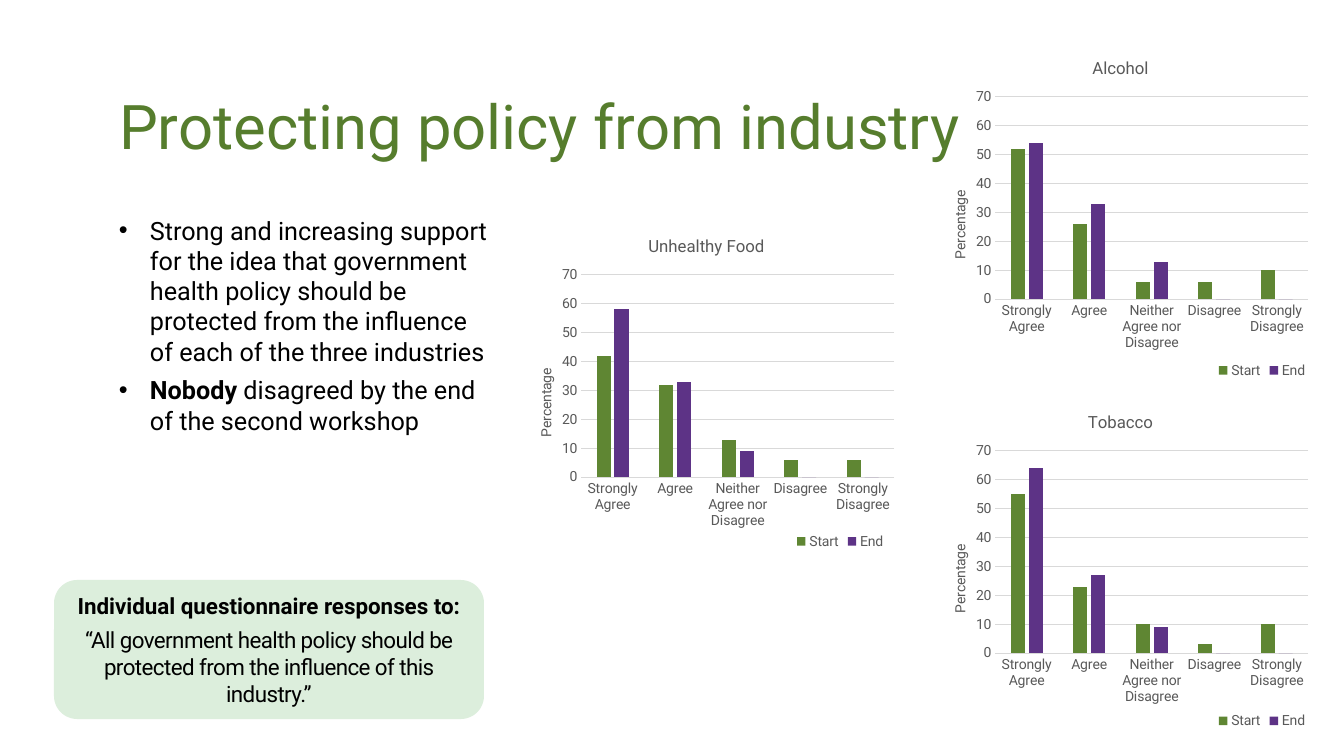
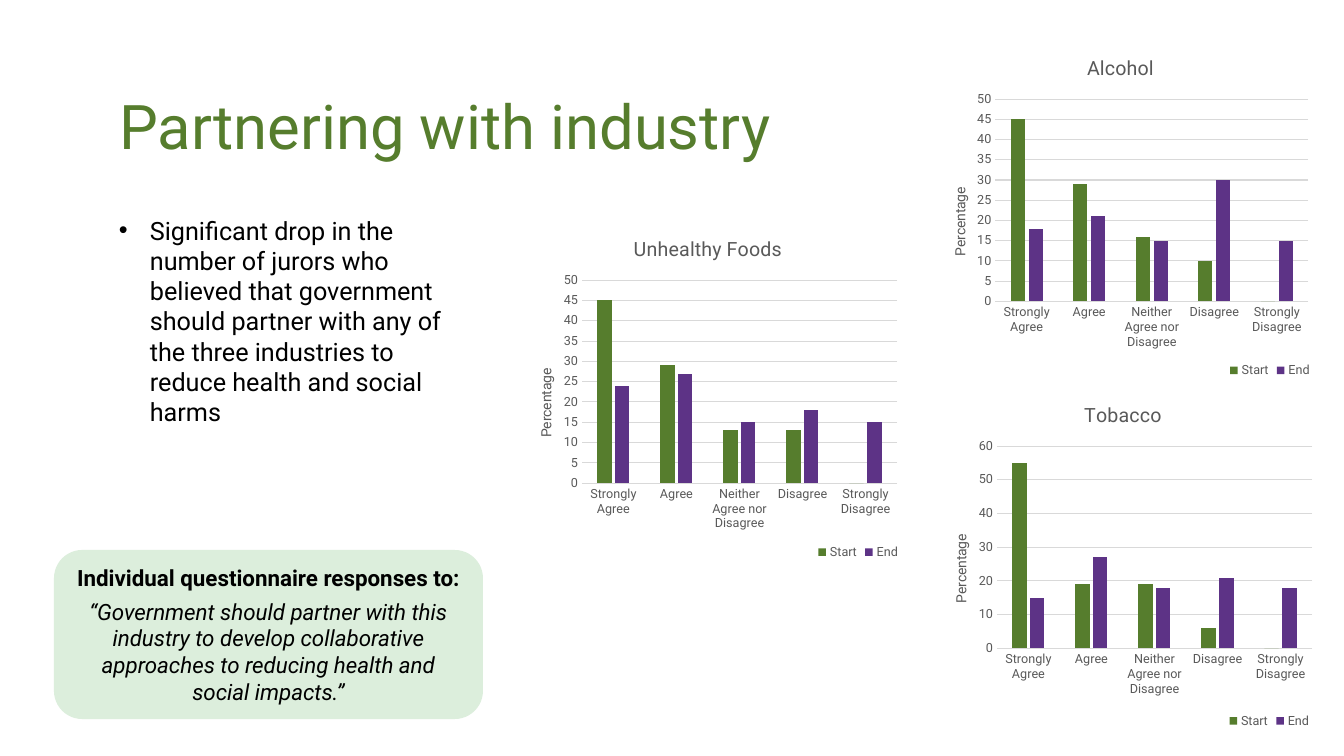
import pptx
import pptx.chart.data
import pptx.dml.color
import pptx.enum.chart
import pptx.enum.shapes
import pptx.enum.text
import pptx.oxml
import pptx.oxml.ns
import pptx.util

PX = 914400 / 100.8
FONT = "Roboto"
COLORS = {
    "title": "567D2D",
    "text": "000000",
    "card": "DCEEDC",
    "label": "595959",
    "grid": "D9D9D9",
    "end": "5D3386",
}
CATEGORIES = ["Strongly Agree", "Agree", "Neither Agree nor Disagree",
              "Disagree", "Strongly Disagree"]
SERIES_NAMES = ["Start", "End"]
PROMPT = "Individual questionnaire responses to:"
TITLE_BOX = (109, 57, 1159, 146)

qn = pptx.oxml.ns.qn
Pt = pptx.util.Pt
ALIGN = pptx.enum.text.PP_ALIGN
ANCHOR = pptx.enum.text.MSO_ANCHOR

# Each chart: title, box, axis maximum, legend corner (share of box), start, end
SLIDES = [
    {
        "title": "Protecting policy from industry",
        "bullets": [
            [("Strong and increasing support for the idea that government health "
              "policy should be protected from the influence of each of the three "
              "industries", False)],
            [("Nobody", True), (" disagreed by the end of the second workshop", False)],
        ],
        "bullet_box": (109, 210, 391, 271),
        "quote": "“All government health policy should be protected from the "
                 "influence of this industry.”",
        "quote_format": {"italic": False},
        "quote_spacing": -40,
        "quote_box": (54, 580, 430, 139),
        "look": {"start": "5F8633", "title_size": 12, "label_size": 10,
                 "plot_top": 0.16, "unit": 10},
        "charts": [
            ("Alcohol", (925, 41, 391, 349), 70, (0.74, 0.91),
             [52, 26, 6, 6, 10], [54, 33, 13, 0, 0]),
            ("Tobacco", (925, 395, 391, 349), 70, (0.74, 0.9),
             [55, 23, 10, 3, 10], [64, 27, 9, 0, 0]),
            ("Unhealthy Food", (511, 219, 391, 349), 70, (0.72, 0.89),
             [42, 32, 13, 6, 6], [58, 33, 9, 0, 0]),
        ],
    },
    {
        "title": "Partnering with industry",
        "bullets": [
            [("Significant drop in the number of jurors who believed that government "
              "should partner with any of the three industries to reduce health and "
              "social harms", False)],
        ],
        "bullet_box": (109, 210, 354, 263),
        "quote": "“Government should partner with this industry to develop "
                 "collaborative approaches to reducing health and social impacts.”",
        "quote_format": {"italic": True},
        "quote_spacing": 0,
        "quote_box": (54, 550, 429, 169),
        "look": {"start": "567D2D", "title_size": 14, "label_size": 9,
                 "plot_top": 0.175, "unit": 5},
        "charts": [
            ("Alcohol", (925, 38, 391, 349), 50, (0.77, 0.92),
             [45, 29, 16, 10, 0], [18, 21, 15, 30, 15]),
            ("Tobacco", (926, 385, 394, 349), 60, (0.76, 0.93),
             [55, 19, 19, 6, 0], [15, 27, 18, 21, 18]),
            ("Unhealthy Foods", (511, 219, 394, 350), 50, (0.77, 0.92),
             [45, 29, 13, 13, 0], [24, 27, 15, 18, 15]),
        ],
    },
]


def px(*values):
    return [pptx.util.Emu(round(v * PX)) for v in values]


def rgb(value):
    return pptx.dml.color.RGBColor.from_string(value)


def apply(obj, **values):
    for name, value in values.items():
        setattr(obj, name, value)


def set_font(font, size, color, **values):
    apply(font, name=FONT, size=Pt(size), **values)
    font.color.rgb = rgb(color)


def add_run(p, text, size, color, **values):
    r = p.add_run()
    r.text = text
    set_font(r.font, size, color, **values)
    return r


def set_line(line, color):
    line.width = Pt(0.75)
    line.color.rgb = rgb(color)


def set_layout(parent, after, inner=False, **shares):
    """Place a chart part by shares of the chart box."""
    for old in parent.findall(qn("c:layout")):
        parent.remove(old)
    items = ['<c:layoutTarget val="inner"/>'] if inner else []
    items += [f'<c:{k}Mode val="edge"/>' for k in ("x", "y")]
    items += [f'<c:{k} val="{v}"/>' for k, v in shares.items()]
    layout = pptx.oxml.parse_xml(
        f'<c:layout {pptx.oxml.ns.nsdecls("c")}><c:manualLayout>'
        + "".join(items) + "</c:manualLayout></c:layout>")
    if after:
        parent.find(qn(after)).addnext(layout)
    else:
        parent.insert(0, layout)


def add_title(s, text):
    sp = s.shapes.title
    apply(sp, **dict(zip(("left", "top", "width", "height"), px(*TITLE_BOX))))
    tf = sp.text_frame
    apply(tf, word_wrap=True, vertical_anchor=ANCHOR.MIDDLE)
    p = tf.paragraphs[0]
    apply(p, alignment=ALIGN.LEFT, line_spacing=0.9)
    add_run(p, text, 44, COLORS["title"])


def add_bullets(s, box, bullets):
    tf = s.shapes.add_textbox(*px(*box)).text_frame
    tf.word_wrap = True
    indent = px(31)[0]
    for i, runs in enumerate(bullets):
        p = tf.add_paragraph() if i else tf.paragraphs[0]
        p.space_after = Pt(6)
        pPr = p._p.get_or_add_pPr()
        pPr.set("marL", str(indent))
        pPr.set("indent", str(-indent))
        ns = pptx.oxml.ns.nsdecls("a")
        pPr.append(pptx.oxml.parse_xml(f'<a:buFont {ns} typeface="Arial"/>'))
        pPr.append(pptx.oxml.parse_xml(f'<a:buChar {ns} char="•"/>'))
        for text, bold in runs:
            add_run(p, text, 18, COLORS["text"], bold=bold)


def add_quote_card(s, box, quote, quote_format, spacing):
    sp = s.shapes.add_shape(pptx.enum.shapes.MSO_SHAPE.ROUNDED_RECTANGLE, *px(*box))
    sp.shadow.inherit = False
    sp.fill.solid()
    sp.fill.fore_color.rgb = rgb(COLORS["card"])
    sp.line.fill.background()
    tf = sp.text_frame
    apply(tf, word_wrap=True, vertical_anchor=ANCHOR.MIDDLE)
    lines = [(PROMPT, {"bold": True}), (quote, {"bold": False, **quote_format})]
    for i, (text, values) in enumerate(lines):
        p = tf.add_paragraph() if i else tf.paragraphs[0]
        apply(p, alignment=ALIGN.CENTER, space_after=Pt(5))
        r = add_run(p, text, 16, COLORS["text"], **values)
    if spacing:
        r._r.get_or_add_rPr().set("spc", str(spacing))


def add_response_chart(s, look, title, box, maximum, legend_at, *values):
    data = pptx.chart.data.CategoryChartData()
    data.categories = CATEGORIES
    for name, vals in zip(SERIES_NAMES, values):
        data.add_series(name, vals)
    chart = s.shapes.add_chart(pptx.enum.chart.XL_CHART_TYPE.COLUMN_CLUSTERED,
                               *px(*box), data).chart
    set_font(chart.font, 10, COLORS["text"])
    label = COLORS["label"]

    chart.has_title = True
    add_run(chart.chart_title.text_frame.paragraphs[0], title,
            look["title_size"], label, bold=False)
    chart.chart_title.include_in_layout = False

    plot = chart.plots[0]
    apply(plot, gap_width=219, overlap=-27, vary_by_categories=False)
    for series, color in zip(plot.series, (look["start"], COLORS["end"])):
        series.format.fill.solid()
        series.format.fill.fore_color.rgb = rgb(color)
    set_layout(plot._element.getparent(), None, inner=True,
               x=0.18, y=look["plot_top"], w=0.8, h=0.58)

    cat, val = chart.category_axis, chart.value_axis
    for axis in (cat, val):
        no_tick = pptx.enum.chart.XL_TICK_MARK.NONE
        apply(axis, major_tick_mark=no_tick, minor_tick_mark=no_tick)
        set_font(axis.tick_labels.font, look["label_size"], label)
    set_line(cat.format.line, COLORS["grid"])
    val.format.line.fill.background()
    unit = 10 if maximum > 50 else look["unit"]
    apply(val, minimum_scale=0, maximum_scale=maximum, major_unit=unit,
          has_major_gridlines=True, has_title=True)
    set_line(val.major_gridlines.format.line, COLORS["grid"])
    add_run(val.axis_title.text_frame.paragraphs[0], "Percentage", 10, label, bold=False)
    axis_title = val.axis_title._element
    body = next(axis_title.iter(qn("a:bodyPr")))
    body.set("rot", "-5400000")
    body.set("vert", "horz")
    set_layout(axis_title, "c:tx", x=0.06, y=0.42)

    chart.has_legend = True
    apply(chart.legend, position=pptx.enum.chart.XL_LEGEND_POSITION.BOTTOM,
          include_in_layout=False)
    set_font(chart.legend.font, look["label_size"], label)
    set_layout(chart.legend._element, "c:legendPos", x=legend_at[0], y=legend_at[1])


def add_results_slide(prs, content):
    s = prs.slides.add_slide(prs.slide_layouts[5])
    add_title(s, content["title"])
    add_bullets(s, content["bullet_box"], content["bullets"])
    add_quote_card(s, content["quote_box"], content["quote"],
                   content["quote_format"], content["quote_spacing"])
    for chart in content["charts"]:
        add_response_chart(s, content["look"], *chart)


def main():
    prs = pptx.Presentation()
    prs.slide_width, prs.slide_height = px(1344, 756)
    for content in SLIDES:
        add_results_slide(prs, content)
    prs.save("out.pptx")


if __name__ == "__main__":
    main()
